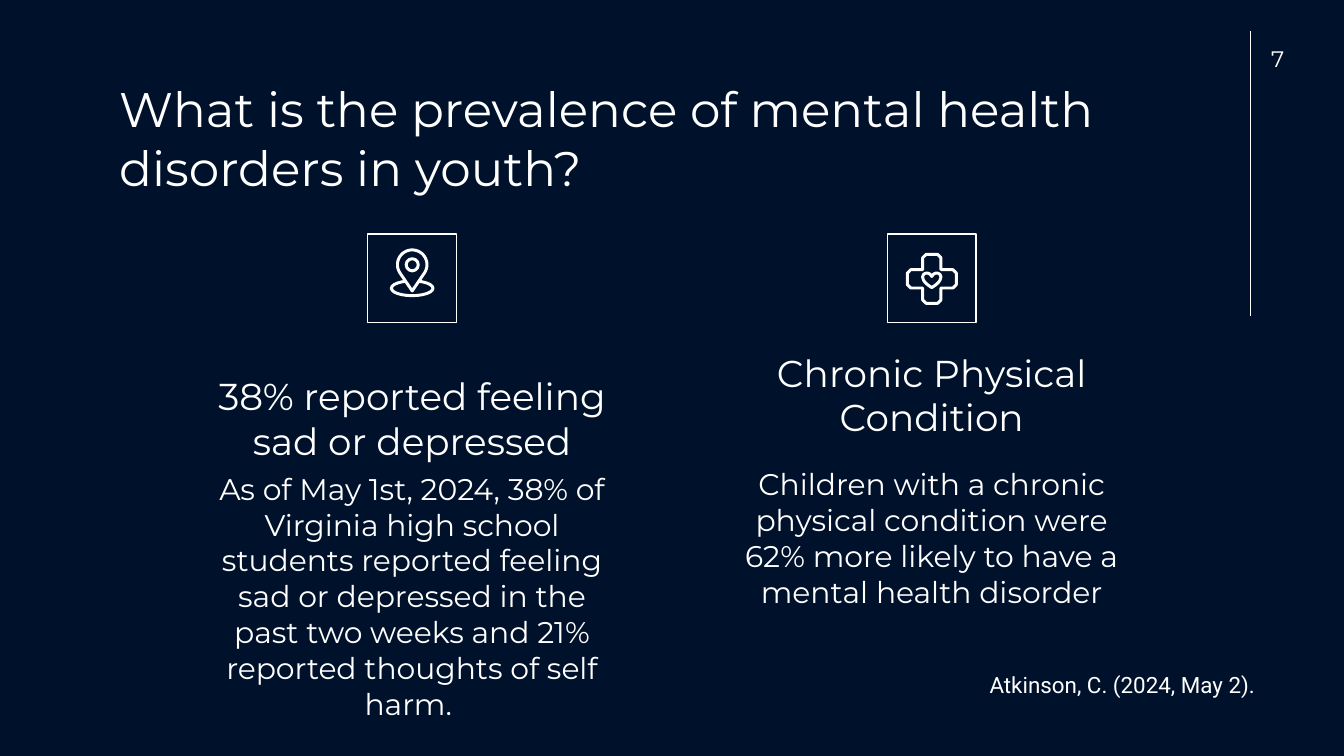
import math
import pptx
import pptx.dml.color
import pptx.enum.shapes
import pptx.enum.text
import pptx.util
from lxml import etree

COLS, ROWS = 100, 56.25  # grid of square cells
CELL = pptx.util.Inches(10) // COLS
NAVY, WHITE = "00122B", "FFFFFF"
rgb = pptx.dml.color.RGBColor.from_string
SHAPE = pptx.enum.shapes.MSO_SHAPE
ALIGN = pptx.enum.text.PP_ALIGN
ANCHOR = pptx.enum.text.MSO_ANCHOR


def grid(*cells):
    """Turn columns and rows into lengths."""
    return [pptx.util.Emu(round(c * CELL)) for c in cells]


def write(sp, cells, text, size, font="Montserrat", align=ALIGN.LEFT, anchor=ANCHOR.TOP):
    sp.left, sp.top, sp.width, sp.height = grid(*cells)
    tf = sp.text_frame
    inset = grid(1)[0]
    frame = {"word_wrap": True, "auto_size": pptx.enum.text.MSO_AUTO_SIZE.NONE,
             "vertical_anchor": anchor, "margin_left": inset, "margin_right": inset,
             "margin_top": inset, "margin_bottom": inset}
    for name, value in frame.items():
        setattr(tf, name, value)
    p = tf.paragraphs[0]
    p.alignment = align
    r = p.add_run()
    r.text = text
    for name, value in {"name": font, "size": pptx.util.Pt(size)}.items():
        setattr(r.font, name, value)
    r.font.color.rgb = rgb(WHITE)


prs = pptx.Presentation()
prs.slide_width, prs.slide_height = grid(COLS, ROWS)
s = prs.slides.add_slide(prs.slide_layouts[5])
s.background.fill.solid()
s.background.fill.fore_color.rgb = rgb(NAVY)

# Title, page number, rule and citation
write(s.shapes.title, (7.87, 4.9, 84.3, 6.3),
      "What is the prevalence of mental health disorders in youth?", 26)
write(s.shapes.add_textbox(0, 0, 0, 0), (93.6, 2.33, 6, 3.5), "7", 12)
write(s.shapes.add_textbox(0, 0, 0, 0), (72.64, 48.95, 22.2, 5),
      "Atkinson, C. (2024, May 2).", 12, "Roboto")
rule = s.shapes.add_connector(pptx.enum.shapes.MSO_CONNECTOR.STRAIGHT,
                              *grid(93.03, 2.3, 93.03, 23.5))
rule.line.color.rgb = rgb(WHITE)
rule.line.width = pptx.util.Pt(0.75)
etree.SubElement(rule._element.spPr, pptx.oxml.ns.qn("a:effectLst"))

# Two columns: left edge, heading height, body top, body height, heading, body
columns = [
    (14.87, 9.75, 34, 19.9, "38% reported feeling sad or depressed",
     "As of May 1st, 2024, 38% of Virginia high school students reported feeling sad or "
     "depressed in the past two weeks and 21% reported thoughts of self harm. "),
    (53.53, 8, 33.66, 15.8, "Chronic Physical Condition",
     "Children with a chronic physical condition were 62% more likely to have a "
     "mental health disorder"),
]
COL_W, FRAME = 31.6, 6.6
outlined = []  # shape, fill, line width
for left, head_h, body_top, body_h, heading, body in columns:
    write(s.shapes.add_textbox(0, 0, 0, 0), (left, 25.7, COL_W, head_h),
          heading, 20, align=ALIGN.CENTER, anchor=ANCHOR.BOTTOM)
    write(s.shapes.add_textbox(0, 0, 0, 0), (left, body_top, COL_W, body_h),
          body, 16, align=ALIGN.CENTER)
    frame = s.shapes.add_shape(
        SHAPE.RECTANGLE, *grid(left + (COL_W - FRAME) / 2, 17.4, FRAME, FRAME))
    outlined.append((frame, None, 0.75))
pin_x, cross_x = [column[0] + COL_W / 2 for column in columns]

# Map pin: base ring, drop with a pointed tip, inner ring
base = s.shapes.add_shape(SHAPE.OVAL, *grid(pin_x - 1.55, 20.9, 3.1, 1.1))
pin_y, pin_r = 19.7, 1.1
drop = [grid(pin_x + pin_r * math.cos(math.radians(a)), pin_y + pin_r * math.sin(math.radians(a)))
        for a in range(145, 396, 10)]
fb = s.shapes.build_freeform(*grid(pin_x, pin_y + 1.95))
fb.add_line_segments(drop, close=True)
pin = fb.convert_to_shape()
hole = s.shapes.add_shape(SHAPE.OVAL, *grid(pin_x - 0.45, pin_y - 0.45, 0.9, 0.9))

# Medical cross: one arm with cut corners, turned four times, and a heart
cross_y, half, reach, cut = 20.75, 0.68, 1.82, 0.25
arm = [(half, -half), (reach - cut, -half), (reach, cut - half),
       (reach, half - cut), (reach - cut, half)]
outline = []
for turn in range(4):
    outline += [grid(cross_x + x, cross_y + y) for x, y in arm]
    arm = [(-y, x) for x, y in arm]
fb = s.shapes.build_freeform(*outline[0])
fb.add_line_segments(outline[1:], close=True)
cross = fb.convert_to_shape()
heart = s.shapes.add_shape(SHAPE.HEART, *grid(cross_x - 0.68, cross_y - 0.45, 1.36, 1.1))

outlined += [(base, None, 1.6), (pin, NAVY, 1.6), (hole, None, 1.6),
             (cross, None, 1.6), (heart, None, 1.6)]
for sp, fill, width in outlined:
    sp.shadow.inherit = False
    if fill:
        sp.fill.solid()
        sp.fill.fore_color.rgb = rgb(fill)
    else:
        sp.fill.background()
    sp.line.color.rgb = rgb(WHITE)
    sp.line.width = pptx.util.Pt(width)

prs.save("out.pptx")
